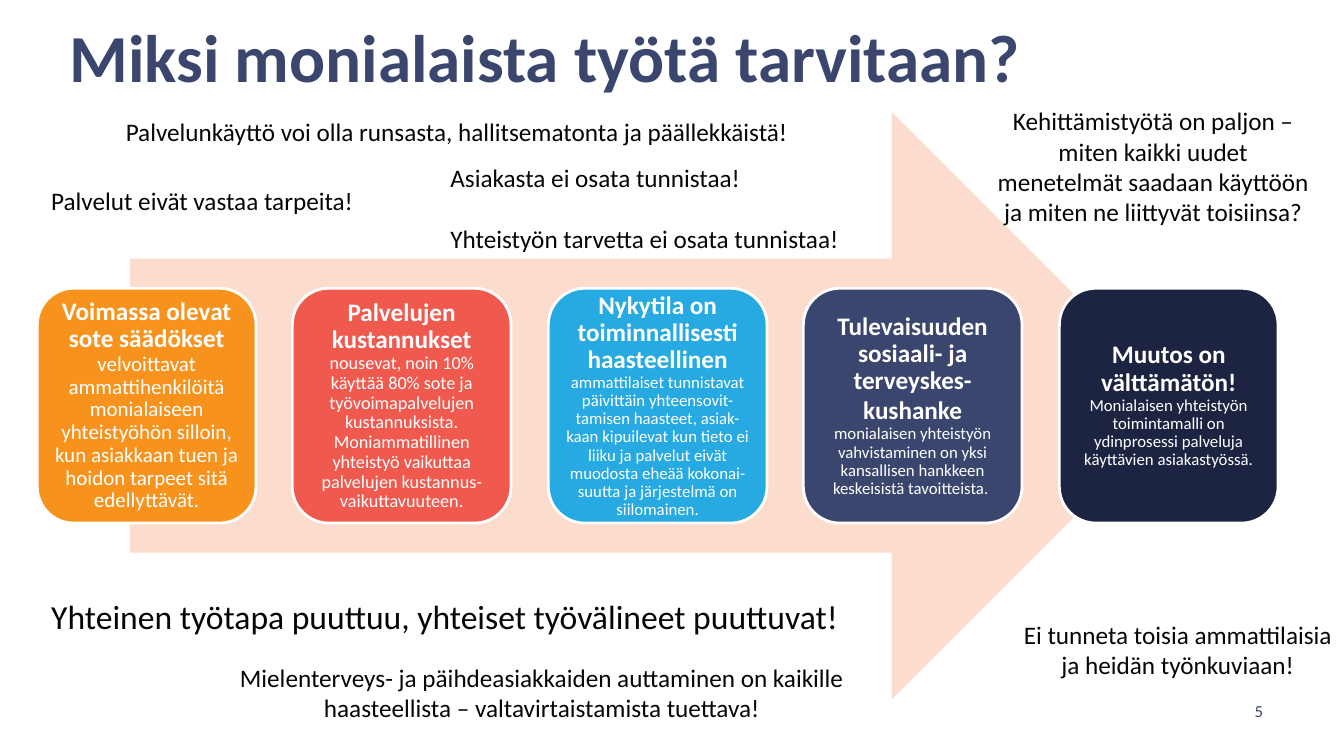
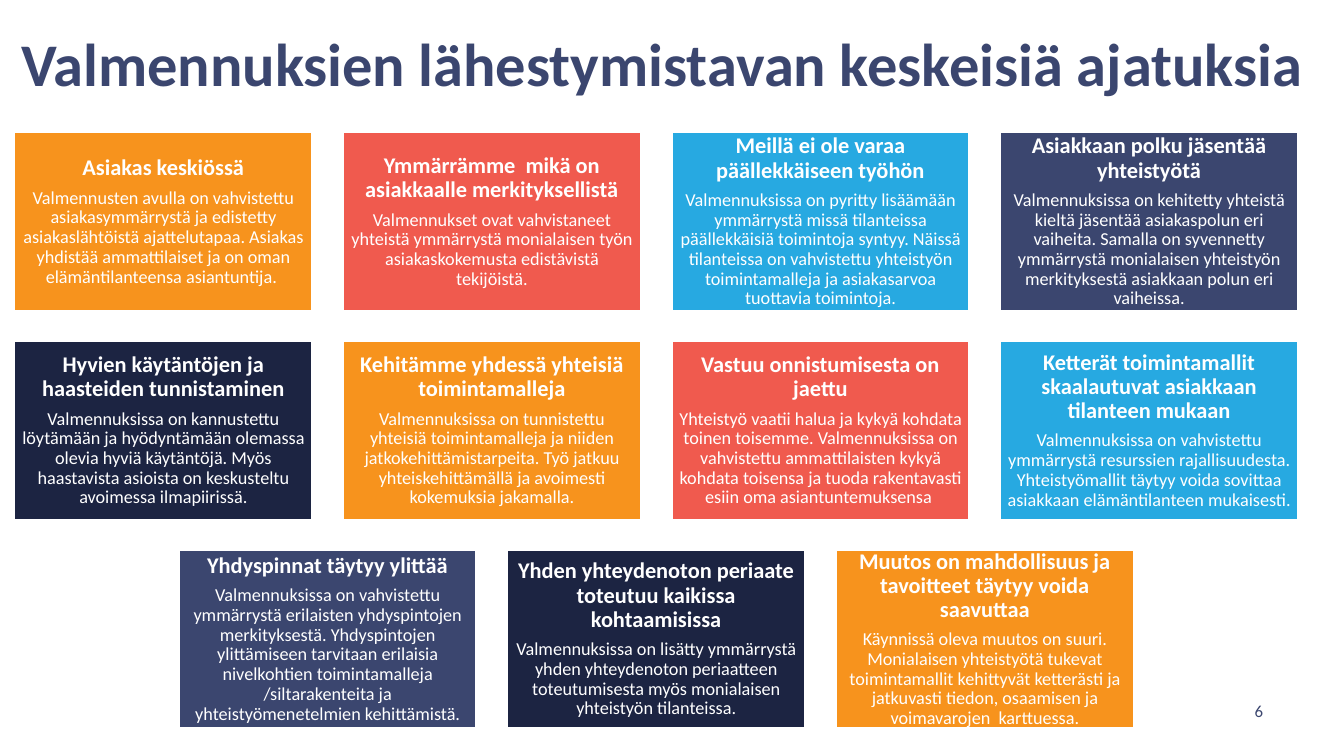
from pptx import Presentation
from pptx.dml.color import RGBColor
from pptx.enum.shapes import MSO_SHAPE
from pptx.enum.text import MSO_ANCHOR, MSO_AUTO_SIZE, PP_ALIGN
from pptx.util import Pt

PX = 9144  # 100 px to the inch
FONT = "Calibri"
ORANGE = RGBColor(0xF7, 0x93, 0x1D)
RED = RGBColor(0xF0, 0x5A, 0x4E)
BLUE = RGBColor(0x27, 0xA9, 0xE1)
INDIGO = RGBColor(0x3B, 0x46, 0x6F)
NAVY = RGBColor(0x1C, 0x24, 0x42)
PEACH = RGBColor(0xFC, 0xDC, 0xCD)
WHITE = RGBColor(0xFF, 0xFF, 0xFF)
BLACK = RGBColor(0x04, 0x07, 0x08)
CARD_COLORS = [ORANGE, RED, BLUE, INDIGO, NAVY]

RECT, ROUNDED = MSO_SHAPE.RECTANGLE, MSO_SHAPE.ROUNDED_RECTANGLE
ARROW = MSO_SHAPE.RIGHT_ARROW
TOP, MIDDLE = MSO_ANCHOR.TOP, MSO_ANCHOR.MIDDLE
LEFT, CENTER = PP_ALIGN.LEFT, PP_ALIGN.CENTER
NO_FIT, GROW = MSO_AUTO_SIZE.NONE, MSO_AUTO_SIZE.SHAPE_TO_FIT_TEXT

prs = Presentation()
prs.slide_width, prs.slide_height = 12192000, 6858000
TITLE_ONLY = prs.slide_layouts[5]


def add_slide(title, left, top, width, size, number):
    """Add a slide with its formatted title and page number."""
    s = prs.slides.add_slide(TITLE_ONLY)
    sp = s.shapes.title
    sp.left, sp.top, sp.width, sp.height = left * PX, top * PX, width * PX, 134 * PX
    page = s.shapes.add_textbox(1209 * PX, 685 * PX, 80 * PX, 40 * PX)
    for box, text, pt, bold, anchor, align in (
        (sp, title, size, True, TOP, LEFT),
        (page, number, 12, False, MIDDLE, CENTER),
    ):
        tf = box.text_frame
        tf.text = text
        tf.word_wrap = True
        tf.auto_size = NO_FIT
        tf.vertical_anchor = anchor
        p = tf.paragraphs[0]
        p.alignment = align
        p.font.name, p.font.size, p.font.bold = FONT, Pt(pt), bold
        p.font.color.rgb = INDIGO
    tf = sp.text_frame
    tf.margin_left = tf.margin_right = tf.margin_top = tf.margin_bottom = 0
    return s


def add_card(s, kind, left, top, width, height, fill, paragraphs):
    """Add a filled card; each paragraph is a list of (text, size, bold) runs."""
    sp = s.shapes.add_shape(kind, left * PX, top * PX, width * PX, height * PX)
    sp.shadow.inherit = False
    sp.fill.solid()
    sp.fill.fore_color.rgb = fill
    sp.line.color.rgb = WHITE
    sp.line.width = Pt(2)
    tf = sp.text_frame
    tf.word_wrap = True
    tf.vertical_anchor = MIDDLE
    tf.margin_left = tf.margin_right = tf.margin_top = tf.margin_bottom = 7 * PX
    for i, runs in enumerate(paragraphs):
        p = tf.add_paragraph() if i else tf.paragraphs[0]
        p.alignment = CENTER
        p.line_spacing = 0.9
        if i:
            p.space_before = Pt(5.6)
        p.font.name = FONT
        p.font.color.rgb = WHITE
        for text, size, bold in runs:
            r = p.add_run()
            r.text = text
            r.font.size, r.font.bold = Pt(size), bold
            r.font.color.rgb = WHITE


# Slide 5: reasons on an arrow, surrounded by remarks
s = add_slide("Miksi monialaista työtä tarvitaan?", 69, 15, 1199, 48, "5")
sp = s.shapes.add_shape(ARROW, 129 * PX, 111 * PX, 1047 * PX, 583 * PX)
sp.shadow.inherit = False
sp.fill.solid()
sp.fill.fore_color.rgb = PEACH
sp.line.fill.background()

reasons = [
    [("Voimassa olevat sote säädökset ", 18, True),
     ("velvoittavat ammattihenkilöitä monialaiseen yhteistyöhön silloin, kun asiakkaan "
      "tuen ja hoidon tarpeet sitä edellyttävät.", 15, False)],
    [("Palvelujen kustannukset ", 18, True),
     ("nousevat, noin 10% käyttää 80% sote ja työvoimapalvelujen kustannuksista. "
      "Moniammatillinen yhteistyö vaikuttaa palvelujen kustannus-vaikuttavuuteen.", 13, False)],
    [("Nykytila on toiminnallisesti haasteellinen ", 18, True),
     ("ammattilaiset tunnistavat päivittäin yhteensovit-tamisen haasteet, asiak-kaan "
      "kipuilevat kun tieto ei liiku ja palvelut eivät muodosta eheää kokonai-suutta "
      "ja järjestelmä on siilomainen.", 12, False)],
    [("Tulevaisuuden sosiaali- ja terveyskes-kushanke", 18, True),
     (" ", 20, False),
     ("monialaisen yhteistyön vahvistaminen on yksi kansallisen hankkeen keskeisistä "
      "tavoitteista. ", 12, False)],
    [("Muutos on välttämätön! ", 18, True),
     ("Monialaisen yhteistyön toimintamalli on ydinprosessi palveluja käyttävien "
      "asiakastyössä.", 12, False)],
]
for i, (fill, runs) in enumerate(zip(CARD_COLORS, reasons)):
    add_card(s, ROUNDED, 37 + i * 507 // 2, 286, 217, 233, fill, [runs])

# left, top, width, height, size, wrapped and centred, lines
remarks = [
    (437, 156, 410, 101, 18, False,
     ["Asiakasta ei osata tunnistaa!", "Yhteistyön tarvetta ei osata tunnistaa!"]),
    (115, 110, 684, 40, 18, False,
     ["Palvelunkäyttö voi olla runsasta, hallitsematonta ja päällekkäistä!"]),
    (41, 179, 323, 40, 18, False, ["Palvelut eivät vastaa tarpeita!"]),
    (41, 586, 810, 50, 24, False,
     ["Yhteinen työtapa puuttuu, yhteiset työvälineet puuttuvat!"]),
    (178, 652, 719, 71, 18, True,
     ["Mielenterveys- ja päihdeasiakkaiden auttaminen on kaikille haasteellista – "
      "valtavirtaistamista tuettava!"]),
    (979, 100, 330, 131, 18, True,
     ["Kehittämistyötä on paljon – miten kaikki uudet menetelmät saadaan käyttöön "
      "ja miten ne liittyvät toisiinsa?"]),
    (1003, 609, 331, 71, 18, True,
     ["Ei tunneta toisia ammattilaisia ja heidän työnkuviaan!"]),
]
for left, top, width, height, size, wrapped, lines in remarks:
    sp = s.shapes.add_textbox(left * PX, top * PX, width * PX, height * PX)
    tf = sp.text_frame
    tf.word_wrap = wrapped
    tf.auto_size = GROW
    tf.text = "\n".join(lines)
    for i, p in enumerate(tf.paragraphs):
        p.alignment = CENTER if wrapped else LEFT
        if i:
            p.space_before = Pt(22)
        p.font.name, p.font.size = FONT, Pt(size)
        p.font.color.rgb = BLACK

# Slide 6: grid of key ideas
s = add_slide("Valmennuksien lähestymistavan keskeisiä ajatuksia", 21, 26, 1275, 43.2, "6")
ideas = [
    ("Asiakas keskiössä",
     "Valmennusten avulla on vahvistettu asiakasymmärrystä ja edistetty asiakaslähtöistä "
     "ajattelutapaa. Asiakas yhdistää ammattilaiset ja on oman elämäntilanteensa "
     "asiantuntija. "),
    ("Ymmärrämme  mikä on asiakkaalle merkityksellistä",
     "Valmennukset ovat vahvistaneet yhteistä ymmärrystä monialaisen työn "
     "asiakaskokemusta edistävistä tekijöistä."),
    ("Meillä ei ole varaa päällekkäiseen työhön",
     "Valmennuksissa on pyritty lisäämään ymmärrystä missä tilanteissa päällekkäisiä "
     "toimintoja syntyy. Näissä tilanteissa on vahvistettu yhteistyön toimintamalleja "
     "ja asiakasarvoa tuottavia toimintoja."),
    ("Asiakkaan polku jäsentää yhteistyötä",
     "Valmennuksissa on kehitetty yhteistä kieltä jäsentää asiakaspolun eri vaiheita. "
     "Samalla on syvennetty ymmärrystä monialaisen yhteistyön merkityksestä asiakkaan "
     "polun eri vaiheissa."),
    ("Hyvien käytäntöjen ja haasteiden tunnistaminen",
     "Valmennuksissa on kannustettu löytämään ja hyödyntämään olemassa olevia hyviä "
     "käytäntöjä. Myös haastavista asioista on keskusteltu avoimessa ilmapiirissä."),
    ("Kehitämme yhdessä yhteisiä toimintamalleja",
     "Valmennuksissa on tunnistettu yhteisiä toimintamalleja ja niiden "
     "jatkokehittämistarpeita. Työ jatkuu yhteiskehittämällä ja avoimesti kokemuksia "
     "jakamalla."),
    ("Vastuu onnistumisesta on jaettu",
     "Yhteistyö vaatii halua ja kykyä kohdata toinen toisemme. Valmennuksissa on "
     "vahvistettu ammattilaisten kykyä kohdata toisensa ja tuoda rakentavasti esiin oma "
     "asiantuntemuksensa "),
    ("Ketterät toimintamallit skaalautuvat asiakkaan tilanteen mukaan",
     "Valmennuksissa on vahvistettu ymmärrystä resurssien rajallisuudesta. "
     "Yhteistyömallit täytyy voida sovittaa asiakkaan elämäntilanteen mukaisesti."),
    ("Yhdyspinnat täytyy ylittää",
     "Valmennuksissa on vahvistettu ymmärrystä erilaisten yhdyspintojen merkityksestä. "
     "Yhdyspintojen ylittämiseen tarvitaan erilaisia nivelkohtien toimintamalleja "
     "/siltarakenteita ja yhteistyömenetelmien kehittämistä."),
    ("Yhden yhteydenoton periaate toteutuu kaikissa kohtaamisissa",
     "Valmennuksissa on lisätty ymmärrystä yhden yhteydenoton periaatteen toteutumisesta "
     "myös monialaisen yhteistyön tilanteissa."),
    ("Muutos on mahdollisuus ja tavoitteet täytyy voida saavuttaa",
     "Käynnissä oleva muutos on suuri. Monialaisen yhteistyötä tukevat toimintamallit "
     "kehittyvät ketterästi ja jatkuvasti tiedon, osaamisen ja voimavarojen  karttuessa."),
]
COLUMNS, PITCH_X, PITCH_Y = 4, 326, 207
for i, (heading, body) in enumerate(ideas):
    row, col = divmod(i, COLUMNS)
    in_row = min(COLUMNS, len(ideas) - row * COLUMNS)
    left = 14 + col * PITCH_X + (COLUMNS - in_row) * PITCH_X // 2
    add_card(s, RECT, left, 131 + row * PITCH_Y, 296, 178,
             CARD_COLORS[i % len(CARD_COLORS)],
             [[(heading, 16, True)], [(body, 13, False)]])

prs.save("out.pptx")
